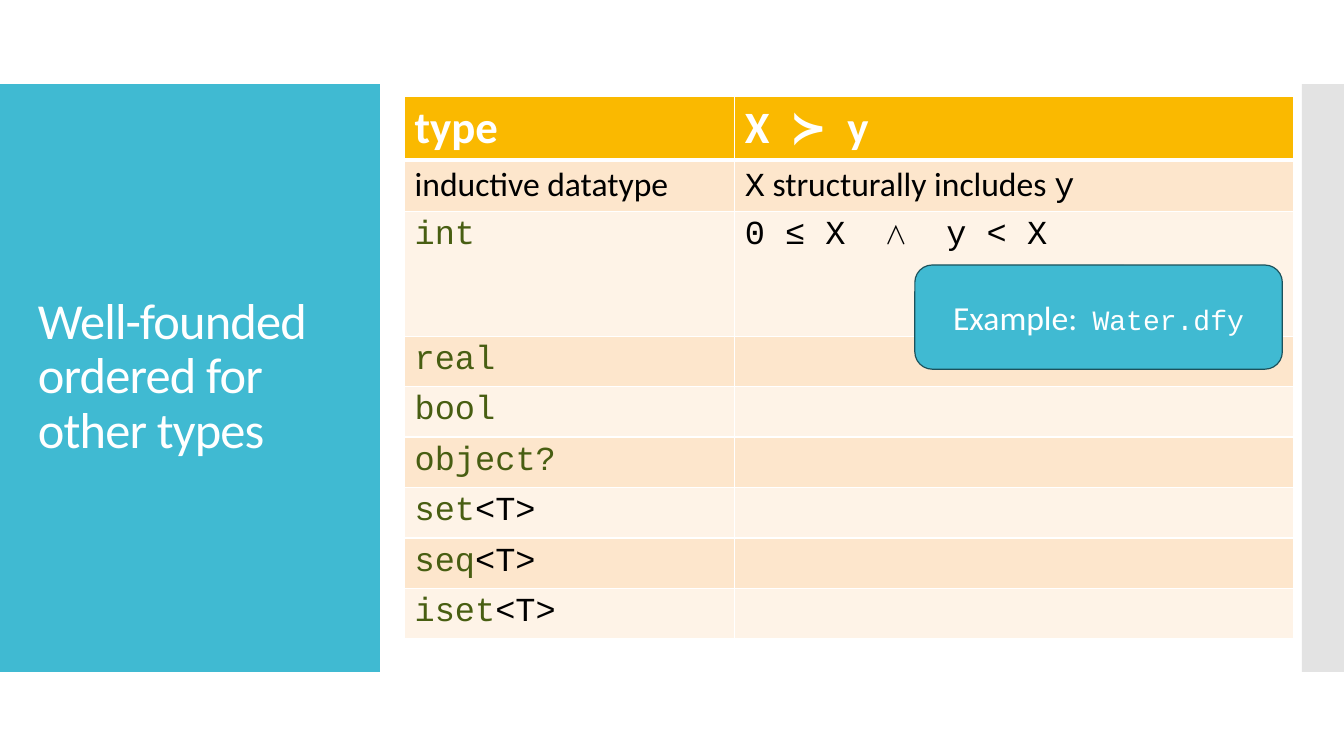
from lxml import etree
from pptx import Presentation
from pptx.dml.color import RGBColor
from pptx.enum.shapes import MSO_SHAPE
from pptx.enum.text import MSO_ANCHOR, PP_ALIGN
from pptx.oxml import parse_xml
from pptx.oxml.ns import nsdecls, qn
from pptx.util import Pt

RECTANGLE, ROUNDED = MSO_SHAPE.RECTANGLE, MSO_SHAPE.ROUNDED_RECTANGLE
MIDDLE, CENTER = MSO_ANCHOR.MIDDLE, PP_ALIGN.CENTER

# Each run is (text, style name in THEME)
TITLE = [("Well-founded ordered for other types", "title")]
EXAMPLE = [("Example:  ", "callout"), ("Water.dfy", "file")]
ROWS = [
    ([("type", "header")], [("X  ≻  y", "header")]),
    ([("inductive datatype", "body")],
     [("X", "code"), (" structurally includes ", "body"), ("y", "code")]),
    ([("int", "keyword")], [("0 ≤ X  ⋀  y < X", "code")]),
    ([("real", "keyword")], []),
    ([("bool", "keyword")], []),
    ([("object?", "keyword")], []),
    ([("set", "keyword"), ("<T>", "code")], []),
    ([("seq", "keyword"), ("<T>", "code")], []),
    ([("iset", "keyword"), ("<T>", "code")], []),
]

SANS, MONO = "Calibri", "Courier New"
WHITE, BLACK, GREEN = "FFFFFF", "000000", "485E12"
THEME = {
    "panel": "40BAD2", "edge": "C8C8C8", "outline": "1C525C", "border": WHITE,
    "header_fill": "FAB900", "bands": ("FDE6CC", "FEF3E7"),
    "styles": {
        "title": {"name": SANS, "size": 36, "color": WHITE, "spacing": -60},
        "header": {"name": SANS, "size": 32, "color": WHITE, "bold": True},
        "body": {"name": SANS, "size": 24, "color": BLACK, "bold": False},
        "code": {"name": MONO, "size": 24, "color": BLACK, "bold": False},
        "keyword": {"name": MONO, "size": 24, "color": GREEN, "bold": False},
        "callout": {"name": SANS, "size": 24, "color": WHITE},
        "file": {"name": MONO, "size": 20, "color": WHITE},
    },
}

SLIDE_WIDTH, SLIDE_HEIGHT = 960, 540
PANEL_TOP, PANEL_HEIGHT = 60, 420
PANEL_WIDTH, EDGE_WIDTH = 271.4, 30
TITLE_PLACE = (20, 88.5, 232, 362.5)
TABLE_LEFT, TABLE_TOP = 289, 68.5
COLUMN_WIDTHS = (235.8, 399.2)
HEADER_HEIGHT, FIRST_HEIGHT, INT_HEIGHT, ROW_HEIGHT = 45.6, 36.8, 89.2, 34.4
EXAMPLE_PLACE = (653.5, 189.3, 262.5, 74.4)


def points(values):
    return [Pt(value) for value in values]


def write(para, runs):
    for text, style_name in runs:
        span = para.add_run()
        span.text = text
        for key, value in THEME["styles"][style_name].items():
            if key == "color":
                span.font.color.rgb = RGBColor.from_string(value)
            elif key == "spacing":
                span.font._element.set("spc", str(value))
            else:
                setattr(span.font, key, Pt(value) if key == "size" else value)


def add_block(page, kind, place, fill, outline=None):
    block = page.shapes.add_shape(kind, *points(place))
    block.shadow.inherit = False
    block.fill.solid()
    block.fill.fore_color.rgb = RGBColor.from_string(fill)
    if outline:
        block.line.color.rgb = RGBColor.from_string(outline)
        block.line.width = Pt(0.85)
    else:
        block.line.fill.background()
    return block


def set_borders(cell, widths):
    """Draw the left, right, top and bottom borders, in that order."""
    properties = cell._tc.get_or_add_tcPr()
    for index, (side, width) in enumerate(zip("LRTB", widths)):
        properties.insert(index, parse_xml(
            f'<a:ln{side} {nsdecls("a")} w="{Pt(width)}"><a:solidFill>'
            f'<a:srgbClr val="{THEME["border"]}"/></a:solidFill></a:ln{side}>'))


def add_type_table(page):
    heights = [HEADER_HEIGHT, FIRST_HEIGHT, INT_HEIGHT]
    heights += [ROW_HEIGHT] * (len(ROWS) - len(heights))
    place = (TABLE_LEFT, TABLE_TOP, sum(COLUMN_WIDTHS), sum(heights))
    table = page.shapes.add_table(
        len(ROWS), len(COLUMN_WIDTHS), *points(place)).table
    for column, width in zip(table.columns, COLUMN_WIDTHS):
        column.width = Pt(width)
    for index, (cells, height) in enumerate(zip(ROWS, heights)):
        table.rows[index].height = Pt(height)
        fill = THEME["bands"][(index - 1) % 2] if index else THEME["header_fill"]
        top, bottom = 3 if index == 1 else 1, 3 if index == 0 else 1
        for column_index, runs in enumerate(cells):
            cell = table.cell(index, column_index)
            cell.fill.solid()
            cell.fill.fore_color.rgb = RGBColor.from_string(fill)
            set_borders(cell, (1, 1, top, bottom))
            write(cell.text_frame.paragraphs[0], runs)


def main():
    deck = Presentation()
    deck.slide_width, deck.slide_height = Pt(SLIDE_WIDTH), Pt(SLIDE_HEIGHT)
    page = deck.slides.add_slide(deck.slide_layouts[6])

    add_block(page, RECTANGLE, (0, PANEL_TOP, PANEL_WIDTH, PANEL_HEIGHT),
              THEME["panel"])
    edge = add_block(
        page, RECTANGLE,
        (SLIDE_WIDTH - EDGE_WIDTH, PANEL_TOP, EDGE_WIDTH, PANEL_HEIGHT),
        THEME["edge"])
    color = edge._element.spPr.find(qn("a:solidFill"))[0]
    etree.SubElement(color, qn("a:alpha")).set("val", "50000")

    title = page.shapes.add_textbox(*points(TITLE_PLACE)).text_frame
    title.word_wrap = True
    title.vertical_anchor = MIDDLE
    title.paragraphs[0].line_spacing = 0.9
    write(title.paragraphs[0], TITLE)

    add_type_table(page)

    example = add_block(page, ROUNDED, EXAMPLE_PLACE, THEME["panel"],
                        THEME["outline"]).text_frame
    example.vertical_anchor = MIDDLE
    example.paragraphs[0].alignment = CENTER
    write(example.paragraphs[0], EXAMPLE)

    deck.save("out.pptx")


if __name__ == "__main__":
    main()
